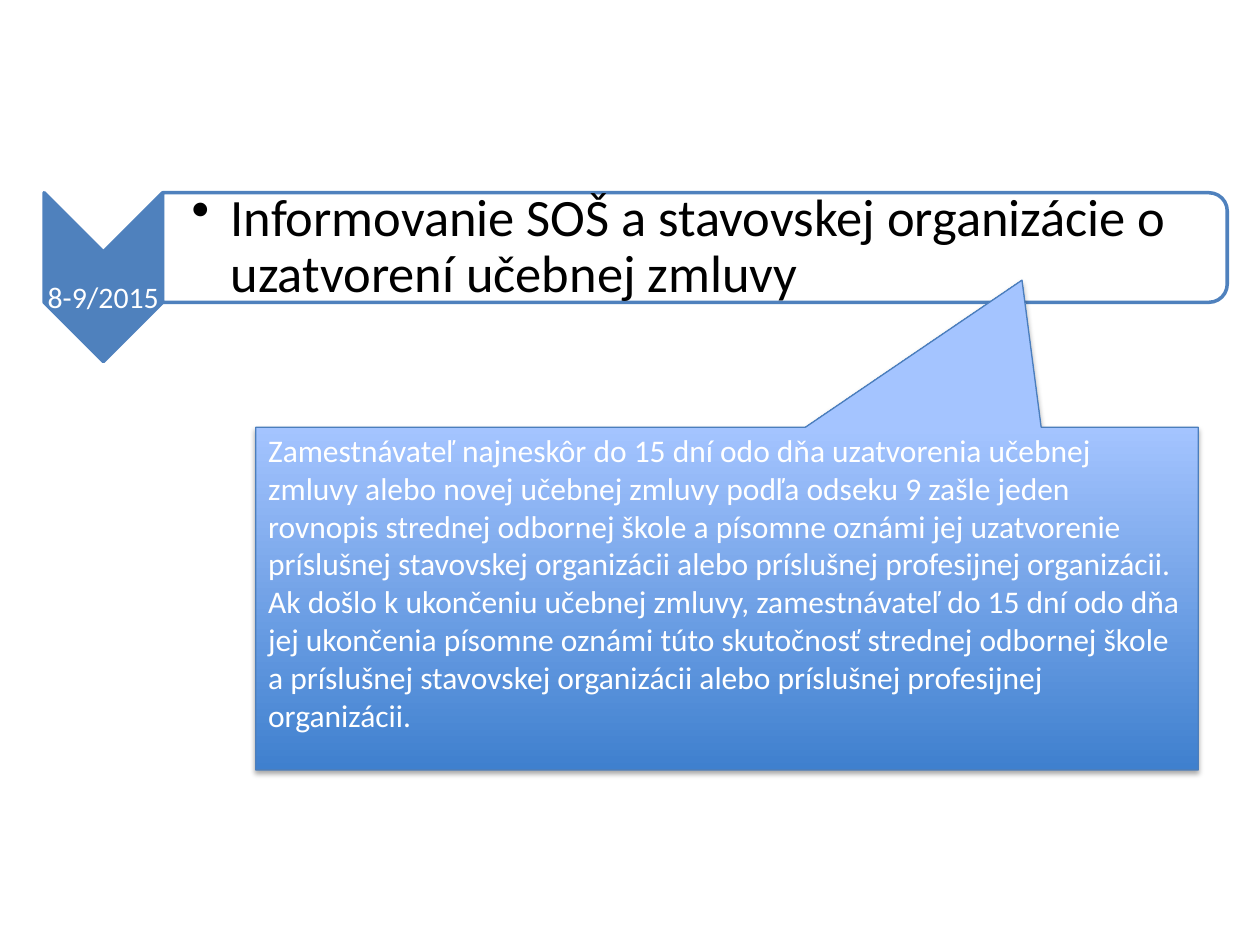
from dataclasses import dataclass, field

from lxml import etree
from pptx import Presentation
from pptx import util as u
from pptx.dml.color import RGBColor
from pptx.enum import shapes, text
from pptx.oxml import ns


@dataclass(frozen=True)
class Theme:
    font: str = "Calibri"
    accent: RGBColor = RGBColor(0x4F, 0x81, 0xBD)
    white: RGBColor = RGBColor(0xFF, 0xFF, 0xFF)
    black: RGBColor = RGBColor(0, 0, 0)
    callout_line: RGBColor = RGBColor(0x4B, 0x7E, 0xBC)
    callout_stops: tuple = (RGBColor(0x3F, 0x80, 0xCE), RGBColor(0xA4, 0xC4, 0xFF))
    date_size: int = 17
    step_size: int = 30
    detail_size: int = 18


@dataclass(frozen=True)
class Box:
    left: float
    top: float
    width: float
    height: float

    def emu(self) -> tuple:
        return tuple(map(u.Inches, (self.left, self.top, self.width, self.height)))


@dataclass(frozen=True)
class Wording:
    content: str
    size: int
    color: RGBColor
    margins: tuple
    anchor: text.MSO_ANCHOR = text.MSO_ANCHOR.MIDDLE
    paragraph: dict = field(default_factory=dict)
    bullet_indent: float = 0


THEME = Theme()


def apply(target, values: dict) -> None:
    for name, value in values.items():
        setattr(target, name, value)


def add_xml(parent, tag: str, **attributes):
    return etree.SubElement(parent, ns.qn(tag), attributes)


def write(shape, wording: Wording) -> None:
    frame = shape.text_frame
    sides = ("margin_left", "margin_top", "margin_right", "margin_bottom")
    apply(frame, dict(zip(sides, map(u.Inches, wording.margins))))
    apply(frame, {"word_wrap": True, "vertical_anchor": wording.anchor})
    paragraph = frame.paragraphs[0]
    apply(paragraph, wording.paragraph)
    if wording.bullet_indent:
        properties = paragraph._p.get_or_add_pPr()
        indent = u.Inches(wording.bullet_indent)
        properties.set("marL", str(indent))
        properties.set("indent", str(-indent))
        add_xml(properties, "a:buChar", char="•")
    run = paragraph.add_run()
    run.text = wording.content
    apply(run.font, {"name": THEME.font, "size": u.Pt(wording.size)})
    run.font.color.rgb = wording.color


def add_block(slide, kind: shapes.MSO_SHAPE, box: Box, line: RGBColor,
              weight: float, rotation: float = 0):
    block = slide.shapes.add_shape(kind, *box.emu())
    block.rotation = rotation
    block.shadow.inherit = False
    block.line.color.rgb = line
    block.line.width = u.Pt(weight)
    return block


def add_label(slide, box: Box, wording: Wording) -> None:
    write(slide.shapes.add_textbox(*box.emu()), wording)


def add_timeline_step(slide) -> None:
    marker = add_block(slide, shapes.MSO_SHAPE.CHEVRON, Box(0.15, 1.73, 1.34, 0.94),
                       THEME.accent, 2, 90)
    marker.fill.solid()
    marker.fill.fore_color.rgb = THEME.accent
    add_label(slide, Box(0.35, 2.17, 0.94, 0.4), Wording(
        "8-9/2015", THEME.date_size, THEME.white, (0.01,) * 4,
        paragraph={"alignment": text.PP_ALIGN.CENTER, "line_spacing": 0.9}))

    panel = add_block(slide, shapes.MSO_SHAPE.ROUND_2_SAME_RECTANGLE,
                      Box(5.08, -2.26, 0.87, 8.45), THEME.accent, 2, 90)
    panel.fill.solid()
    panel.fill.fore_color.rgb = THEME.white
    panel_color = panel._element.spPr.find(ns.qn("a:solidFill"))[0]
    add_xml(panel_color, "a:alpha", val="90000")
    add_label(slide, Box(1.29, 1.57, 8.41, 0.79), Wording(
        "Informovanie SOŠ a stavovskej organizácie o uzatvorení učebnej zmluvy",
        THEME.step_size, THEME.black, (0.23, 0.02, 0.02, 0.02),
        paragraph={"level": 1, "alignment": text.PP_ALIGN.LEFT, "line_spacing": 0.9},
        bullet_indent=0.31))


def add_detail(slide) -> None:
    callout = add_block(slide, shapes.MSO_SHAPE.RECTANGULAR_CALLOUT,
                        Box(2.03, 3.39, 7.48, 2.72), THEME.callout_line, 0.75)
    callout.adjustments[0] = 0.313
    callout.adjustments[1] = -0.929
    callout.fill.gradient()
    callout.fill.gradient_angle = 90
    for stop, color, position in zip(callout.fill.gradient_stops, THEME.callout_stops, (0, 1)):
        stop.color.rgb = color
        stop.position = position
    effects = callout._element.spPr.find(ns.qn("a:effectLst"))
    shadow = add_xml(effects, "a:outerShdw", blurRad=str(u.Pt(3.1)), dist=str(u.Pt(1.8)),
                     dir="5400000", rotWithShape="0")
    add_xml(add_xml(shadow, "a:srgbClr", val=str(THEME.black)), "a:alpha", val="35000")
    write(callout, Wording(
        "Zamestnávateľ najneskôr do 15 dní odo dňa uzatvorenia učebnej zmluvy alebo novej "
        "učebnej zmluvy podľa odseku 9 zašle jeden rovnopis strednej odbornej škole a písomne "
        "oznámi jej uzatvorenie príslušnej stavovskej organizácii alebo príslušnej profesijnej "
        "organizácii. Ak došlo k ukončeniu učebnej zmluvy, zamestnávateľ do 15 dní odo dňa jej "
        "ukončenia písomne oznámi túto skutočnosť strednej odbornej škole a príslušnej "
        "stavovskej organizácii alebo príslušnej profesijnej organizácii.",
        THEME.detail_size, THEME.white, (0.1, 0.03, 0.1, 0.05), text.MSO_ANCHOR.TOP,
        {"alignment": text.PP_ALIGN.LEFT}))


def main() -> None:
    deck = Presentation()
    apply(deck, {"slide_width": u.Inches(10), "slide_height": u.Inches(7.5)})
    slide = deck.slides.add_slide(deck.slide_layouts[6])
    add_timeline_step(slide)
    add_detail(slide)
    deck.save("out.pptx")


if __name__ == "__main__":
    main()
